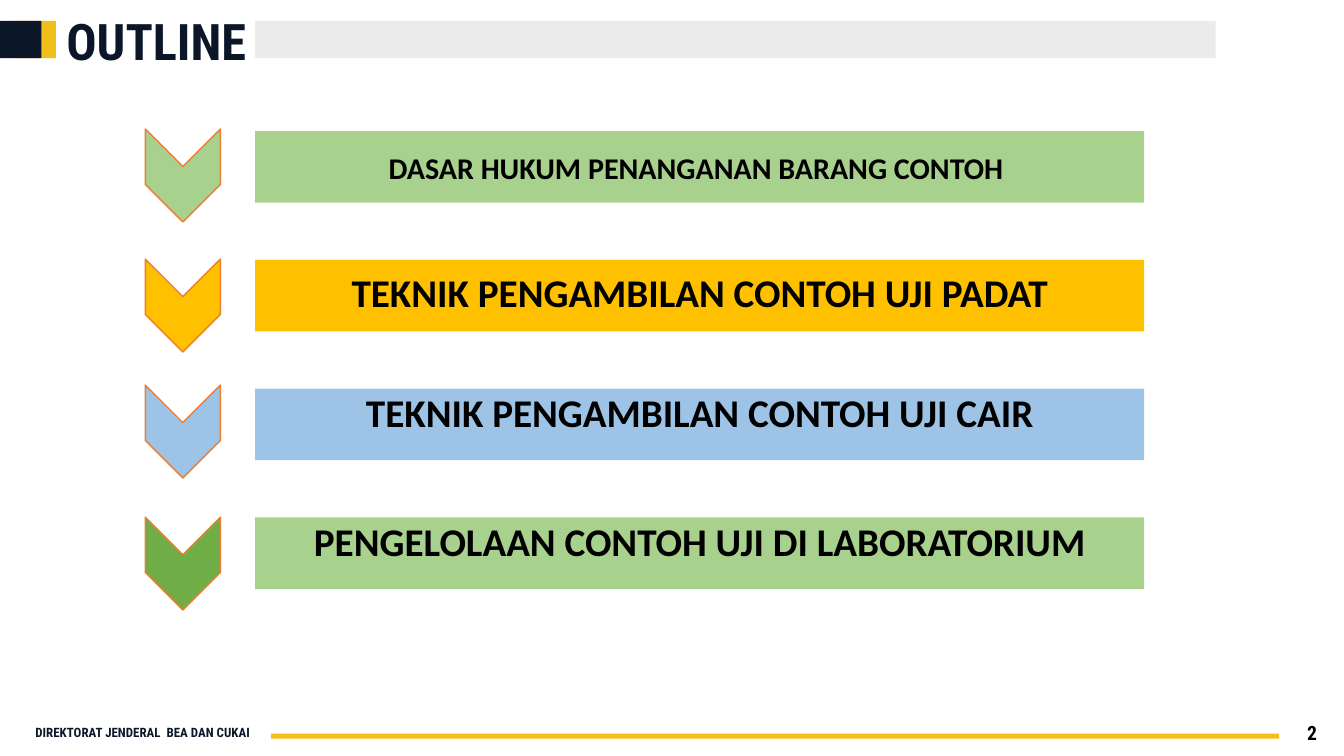
from dataclasses import dataclass

from lxml import etree
from pptx import Presentation
from pptx.dml.color import RGBColor
from pptx.enum import shapes, text
from pptx.oxml.ns import qn
from pptx.util import Pt

NAVY, GOLD, GREY, BLACK = "0B1728", "F2BE1A", "D9D9D9", "000000"
ORANGE, GREEN = "ED7D31", "A9D18E"
RECT, CHEVRON = shapes.MSO_SHAPE.RECTANGLE, shapes.MSO_SHAPE.CHEVRON
LEFT, CENTER = text.PP_ALIGN.LEFT, text.PP_ALIGN.CENTER
HEADING_FONT, BODY_FONT = "Roboto Condensed", "Calibri"


@dataclass
class Box:
    left: float
    top: float
    width: float
    height: float


@dataclass
class Label:
    words: str
    size: float
    color: str = BLACK
    font: str = HEADING_FONT
    align: text.PP_ALIGN = CENTER
    spacing: float = 1.0
    inset: float = 3.6


@dataclass
class Topic:
    label: Label
    bar_fill: str
    chevron_fill: str
    chevron_top: float


def rgb(color: str) -> RGBColor:
    return RGBColor.from_string(color)


def points(box: Box) -> list:
    return [Pt(v) for v in (box.left, box.top, box.width, box.height)]


def add_block(slide, box: Box, fill: str, kind=RECT, line: str = ""):
    sp = slide.shapes.add_shape(kind, *points(box))
    sp.shadow.inherit = False
    sp.fill.solid()
    sp.fill.fore_color.rgb = rgb(fill)
    if line:
        sp.line.color.rgb = rgb(line)
        sp.line.width = Pt(1)
    else:
        sp.line.fill.background()
    return sp


def write(sp, label: Label) -> None:
    tf = sp.text_frame
    frame_format = {"word_wrap": True, "margin_top": Pt(label.inset),
                    "vertical_anchor": text.MSO_ANCHOR.TOP}
    for name, value in frame_format.items():
        setattr(tf, name, value)
    p = tf.paragraphs[0]
    p.alignment, p.line_spacing = label.align, label.spacing
    r = p.add_run()
    r.text = label.words
    run_format = {"name": label.font, "size": Pt(label.size), "bold": True}
    for name, value in run_format.items():
        setattr(r.font, name, value)
    r.font.color.rgb = rgb(label.color)


def add_text(slide, box: Box, label: Label) -> None:
    write(slide.shapes.add_textbox(*points(box)), label)


def set_opacity(sp, percent: int) -> None:
    color = sp.fill._xPr.find(qn("a:solidFill"))[0]
    etree.SubElement(color, qn("a:alpha")).set("val", str(percent * 1000))


def topic_label(words: str, spacing: float = 0.9, size: float = 28,
                inset: float = 3.6) -> Label:
    return Label(words, size, font=BODY_FONT, spacing=spacing, inset=inset)


TOPICS = [
    Topic(topic_label("DASAR HUKUM PENANGANAN BARANG CONTOH ", 0.87, 21.5, 17),
          GREEN, GREEN, 98.6),
    Topic(topic_label("TEKNIK PENGAMBILAN CONTOH UJI PADAT", 1.07),
          "FFC000", "FFC000", 191.5),
    Topic(topic_label("TEKNIK PENGAMBILAN CONTOH UJI CAIR"),
          "9DC3E6", "9DC3E6", 281.5),
    Topic(topic_label("PENGELOLAAN CONTOH UJI DI LABORATORIUM"),
          GREEN, "70AD47", 375.8),
]
BAR_TOP, BAR_PITCH = 93.6, 92


def main() -> None:
    prs = Presentation()
    prs.slide_width, prs.slide_height = Pt(960), Pt(540)
    slide = prs.slides.add_slide(prs.slide_layouts[6])

    # Header band and title
    add_block(slide, Box(10, 15, 30, 26.6), GOLD)
    set_opacity(add_block(slide, Box(182.2, 15, 686.2, 26.6), GREY), 50)
    add_block(slide, Box(0, 15, 29.6, 26.6), NAVY)
    add_text(slide, Box(40.3, 3.6, 159, 51),
             Label("OUTLINE", 36, NAVY, align=LEFT))

    # Footer
    add_block(slide, Box(193.7, 524, 720, 3.6), GOLD)
    add_text(slide, Box(0, 515.5, 203.8, 23.8),
             Label("DIREKTORAT JENDERAL  BEA DAN CUKAI", 9.2, NAVY, spacing=0.9))
    add_text(slide, Box(914.4, 511.2, 45.6, 28.8), Label("2", 14))

    # Topics: a labelled bar with a downward chevron beside it
    for i, topic in enumerate(TOPICS):
        bar = Box(182.2, BAR_TOP + i * BAR_PITCH, 635, 51.2)
        write(add_block(slide, bar, topic.bar_fill), topic.label)
        chevron = add_block(slide, Box(97.4, topic.chevron_top, 66.4, 53.6),
                            topic.chevron_fill, CHEVRON, ORANGE)
        chevron.rotation = 90

    prs.save("out.pptx")


if __name__ == "__main__":
    main()
